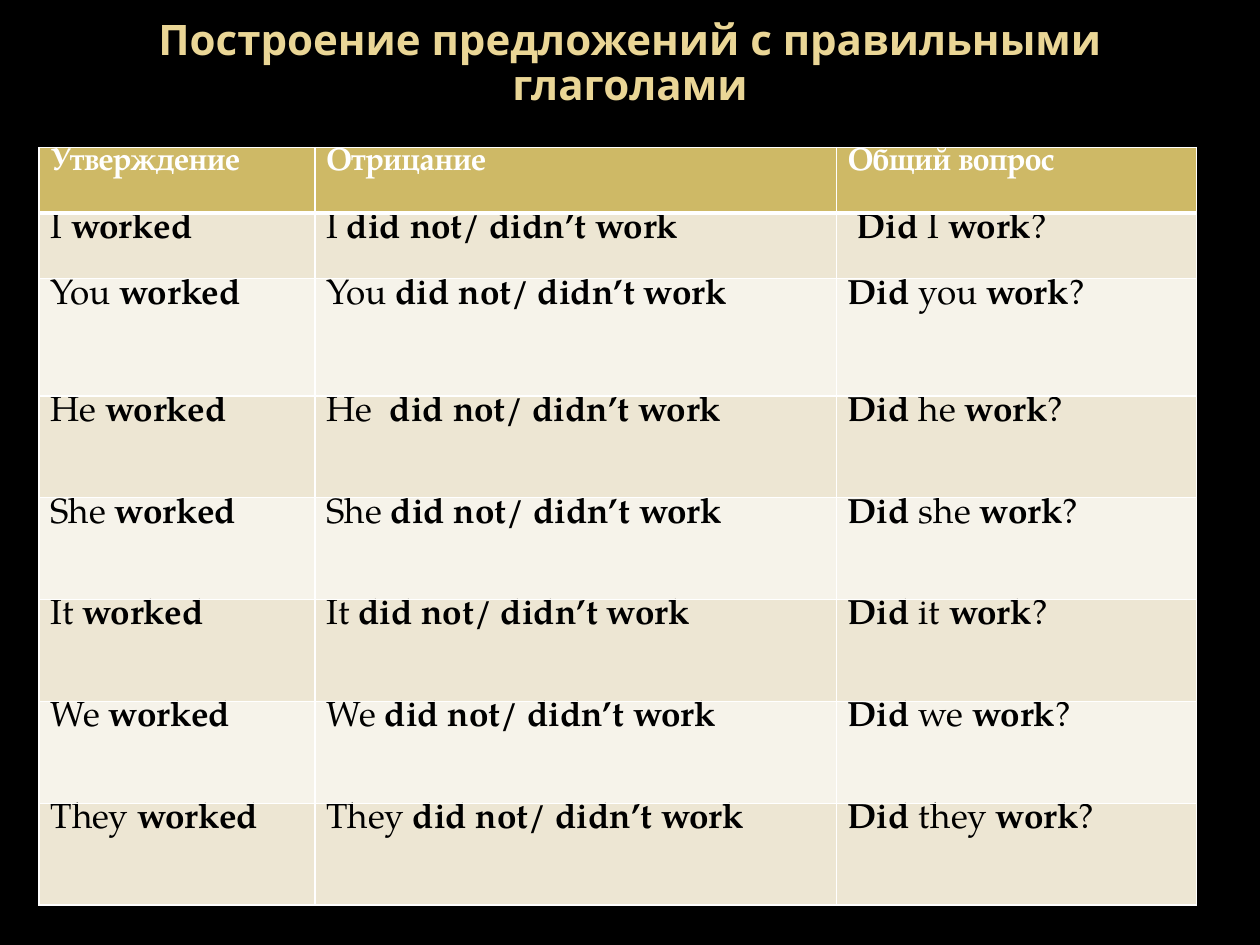
from dataclasses import dataclass
from pptx import Presentation
from pptx.dml.color import RGBColor as RGB
from pptx.enum.text import MSO_ANCHOR as Anchor, MSO_AUTO_SIZE as Auto, PP_ALIGN as Align
from pptx.oxml import parse_xml
from pptx.oxml.ns import nsdecls
from pptx.util import Pt


@dataclass(frozen=True)
class Theme:
    back: str = "000000"
    gold: str = "EAD696"
    deep: str = "E7D081"
    head: str = "CEB966"
    bands: tuple = ("EDE6D3", "F6F3EA")
    light: str = "FFFFFF"
    dark: str = "000000"
    sans: str = "Open Sans"
    serif: str = "TeX Gyre Pagella"
    big: float = 24
    mid: float = 20
    small: float = 18
    thin: float = 1
    thick: float = 3
    pad: float = 6.5


class Deck:
    def __init__(self, theme):
        self.theme = theme
        self.file = Presentation()
        self.file.slide_width, self.file.slide_height = Pt(720), Pt(540)
        self.slide = self.file.slides.add_slide(self.file.slide_layouts[5])
        fill = self.slide.background.fill
        fill.solid()
        fill.fore_color.rgb = RGB.from_string(theme.back)

    def run(self, para, text, face, size, bold):
        run = para.add_run()
        run.text = text
        run.font.name, run.font.size, run.font.bold = face, Pt(size), bold
        return run.font

    def title(self, text, left, top, width, height):
        look = self.theme
        shape = self.slide.shapes.title
        shape.left, shape.top, shape.width, shape.height = map(Pt, (left, top, width, height))
        frame = shape.text_frame
        frame.word_wrap, frame.auto_size = True, Auto.NONE
        frame.vertical_anchor = Anchor.MIDDLE
        para = frame.paragraphs[0]
        para.alignment, para.line_spacing = Align.CENTER, 0.9
        fill = self.run(para, text, look.sans, look.big, True).fill
        fill.gradient()
        fill.gradient_angle = 280
        for stop, (place, color) in zip(fill.gradient_stops, ((0.73, look.gold), (1, look.deep))):
            stop.position = place
            stop.color.rgb = RGB.from_string(color)

    def border(self, cell, row):
        look = self.theme
        props = cell._tc.get_or_add_tcPr()
        heavy = {0: "B", 1: "T"}.get(row)
        for spot, side in enumerate("LRTB"):
            width = Pt(look.thick if side == heavy else look.thin)
            line = parse_xml(
                f'<a:ln{side} {nsdecls("a")} w="{width}"><a:solidFill>'
                f'<a:srgbClr val="{look.light}"/></a:solidFill></a:ln{side}>')
            props.insert(spot, line)

    def cell(self, cell, runs, row):
        look = self.theme
        shade, ink, size = look.bands[(row - 1) % 2], look.dark, look.mid
        if row == 0:
            shade, ink, size = look.head, look.light, look.small
        cell.fill.solid()
        cell.fill.fore_color.rgb = RGB.from_string(shade)
        cell.margin_left = cell.margin_right = Pt(look.pad)
        cell.margin_top = cell.margin_bottom = Pt(0)
        cell.vertical_anchor = Anchor.TOP
        para = cell.text_frame.paragraphs[0]
        for text, bold in runs:
            font = self.run(para, text, look.serif, size, bold)
            font.color.rgb = RGB.from_string(ink)
        self.border(cell, row)

    def table(self, rows, left, top, widths, heights):
        frame = self.slide.shapes.add_table(
            len(rows), len(widths), Pt(left), Pt(top), Pt(sum(widths)), Pt(sum(heights)))
        grid = frame.table
        for col, width in zip(grid.columns, widths):
            col.width = Pt(width)
        for row, height in zip(grid.rows, heights):
            row.height = Pt(height)
        for y, row in enumerate(rows):
            for x, runs in enumerate(row):
                self.cell(grid.cell(y, x), runs, y)

    def save(self):
        self.file.save("out.pptx")


def forms(who):
    ask = who if who == "I" else who.lower()
    gap = "  " if who == "He" else " "
    lead = [(" ", False)] if who == "I" else []
    return [
        [(f"{who} ", False), ("worked", True)],
        [(f"{who}{gap}", False), ("did not/ didn’t work", True)],
        lead + [("Did", True), (f" {ask} ", False), ("work", True), ("?", False)],
    ]


def main():
    deck = Deck(Theme())
    deck.title("Построение предложений с правильными глаголами", 36, 0, 648, 73.5)
    heads = [[(text, True)] for text in ("Утверждение", "Отрицание", "Общий вопрос")]
    rows = [heads] + [forms(who) for who in ("I", "You", "He", "She", "It", "We", "They")]
    deck.table(rows, 22.4, 84.3, [157.6, 298, 205.9], [37.5, 37.5, 67] + [58.2] * 5)
    deck.save()


if __name__ == "__main__":
    main()
